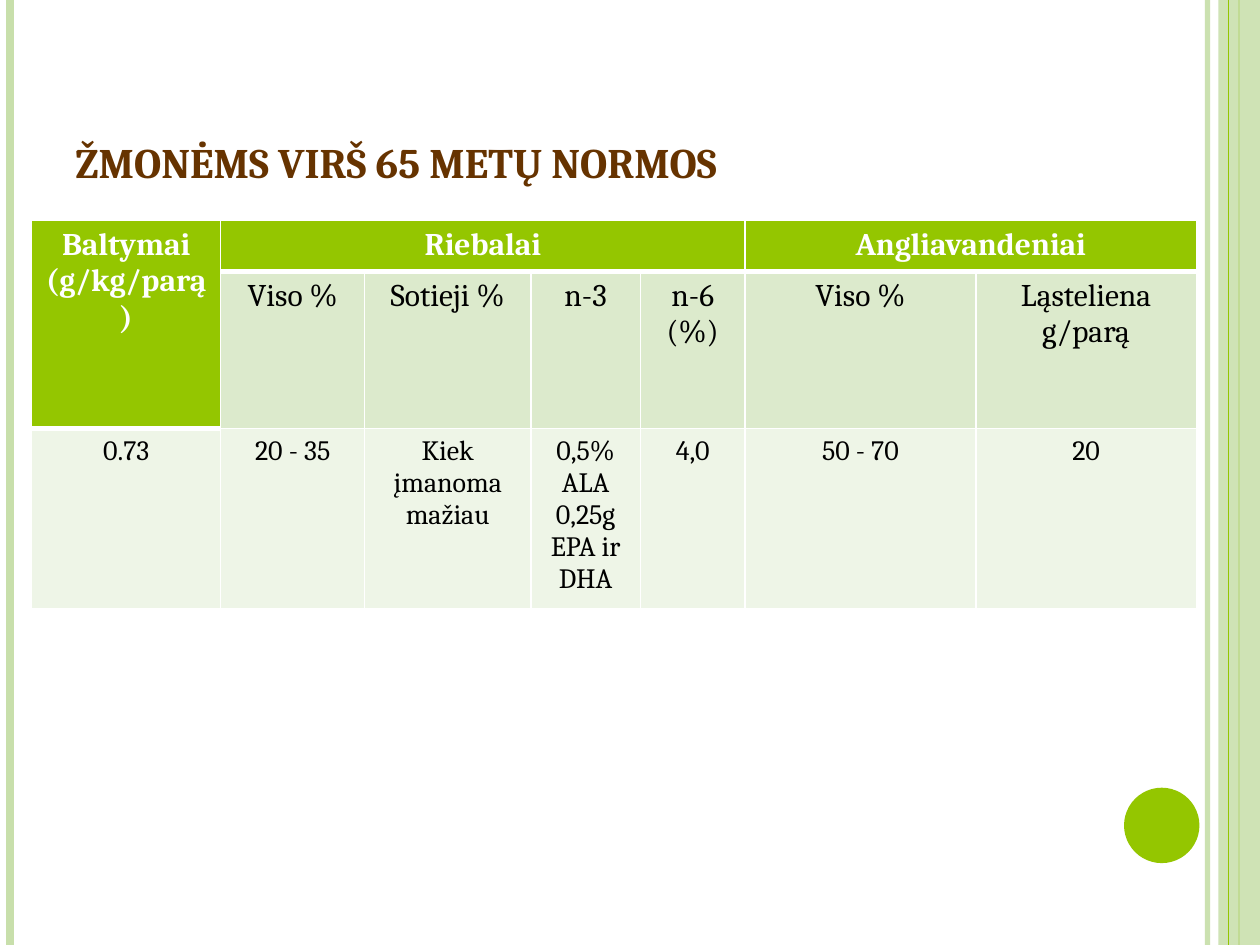
from lxml.etree import SubElement
from pptx import Presentation
from pptx.dml.color import RGBColor
from pptx.enum.shapes import MSO_CONNECTOR as Connector, MSO_SHAPE as Shape
from pptx.enum.text import MSO_ANCHOR as Anchor, PP_ALIGN as Align
from pptx.oxml.ns import qn
from pptx.util import Cm, Pt

COLORS = {
    "green": "94C600",
    "pale": "C8DFAB",
    "band": "DCEACC",
    "light": "EEF5E7",
    "brown": "663300",
    "white": "FFFFFF",
    "black": "000000",
}
FONT = "Cambria"
SLIDE_WIDTH, SLIDE_HEIGHT = 25.4, 19.05

COLUMN_WIDTHS = [3.81, 2.9, 3.35, 2.21, 2.11, 4.65, 4.45]
ROW_HEIGHTS = [1.02, 3.17, 3.48]
ROWS = [
    ["Baltymai (g/kg/parą)", "Riebalai", "", "", "", "Angliavandeniai", ""],
    ["", "Viso %", "Sotieji %", "n-3", "n-6\n(%)", "Viso %", "Ląsteliena\ng/parą"],
    ["0.73", "20 - 35", "Kiek įmanoma mažiau", "0,5% ALA\n0,25g EPA ir DHA",
     "4,0", "50 - 70", "20"],
]
MERGES = [((0, 0), (1, 0)), ((0, 1), (0, 4)), ((0, 5), (0, 6))]


def rgb(name):
    return RGBColor.from_string(COLORS[name])


def set_alpha(fill_parent, percent):
    color = next(fill_parent.iter(qn("a:srgbClr")))
    SubElement(color, qn("a:alpha"), val=str(percent * 1000))


def write_text(frame, text, size=18, color="black", bold=False,
               align=Align.LEFT, small_caps=False):
    frame.word_wrap = True
    for index, line in enumerate(text.split("\n")):
        paragraph = frame.add_paragraph() if index else frame.paragraphs[0]
        paragraph.alignment = align
        run = paragraph.add_run()
        run.text = line
        run.font.name = FONT
        run.font.size = Pt(size)
        run.font.bold = bold
        run.font.color.rgb = rgb(color)
        if small_caps:
            run.font._element.set("cap", "small")


def add_stripe(slide, x, top, height, color, width, alpha=None):
    line = slide.shapes.add_connector(
        Connector.STRAIGHT, Cm(x), Cm(top), Cm(x), Cm(top + height))
    line.line.color.rgb = rgb(color)
    line.line.width = Pt(width)
    if alpha:
        set_alpha(line._element.spPr, alpha)
    SubElement(line._element.spPr, qn("a:effectLst"))


def add_block(slide, kind, left, top, width, height, color, alpha=None):
    shape = slide.shapes.add_shape(kind, Cm(left), Cm(top), Cm(width), Cm(height))
    shape.shadow.inherit = False
    shape.fill.solid()
    shape.fill.fore_color.rgb = rgb(color)
    shape.line.fill.background()
    if alpha:
        set_alpha(shape._element.spPr, alpha)


def add_frame(slide, left, top, width, height):
    right = left + width
    add_stripe(slide, right - 1.06, top, height, "pale", 3, alpha=93)
    add_stripe(slide, left + 0.21, top, height, "pale", 4.5)
    add_stripe(slide, right - 0.42, top, height, "green", 1.5)
    add_block(slide, Shape.RECTANGLE, right - 0.84, top, 0.84, height, "pale", alpha=87)
    add_stripe(slide, right - 0.64, top, height, "green", 0.75)
    add_block(slide, Shape.OVAL, right - 2.74, top + 15.88, 1.52, 1.52, "green")


def add_title(slide, left, top, width, height):
    box = slide.shapes.add_textbox(Cm(left), Cm(top), Cm(width), Cm(height))
    box.text_frame.vertical_anchor = Anchor.BOTTOM
    write_text(box.text_frame, "žmonėms virš 65 metų normos",
               size=30, color="brown", bold=True, small_caps=True)


def is_header(row, column):
    return row == 0 or (row == 1 and column == 0)


def set_borders(cell, top, bottom):
    properties = cell._tc.get_or_add_tcPr()
    for side, width in (("L", 1), ("R", 1), ("T", top), ("B", bottom)):
        line = SubElement(properties, qn(f"a:ln{side}"), w=str(Pt(width)))
        fill = SubElement(line, qn("a:solidFill"))
        SubElement(fill, qn("a:srgbClr"), val=COLORS["white"])


def add_norms_table(slide, left, top):
    table = slide.shapes.add_table(
        len(ROWS), len(COLUMN_WIDTHS), Cm(left), Cm(top),
        Cm(sum(COLUMN_WIDTHS)), Cm(sum(ROW_HEIGHTS))).table
    for column, width in zip(table.columns, COLUMN_WIDTHS):
        column.width = Cm(width)
    for row, height in zip(table.rows, ROW_HEIGHTS):
        row.height = Cm(height)
    for start, end in MERGES:
        table.cell(*start).merge(table.cell(*end))
    for row, texts in enumerate(ROWS):
        for column, text in enumerate(texts):
            cell = table.cell(row, column)
            header = is_header(row, column)
            below_header = row > 0 and is_header(row - 1, column)
            set_borders(cell, 3 if below_header else 1, 3 if header else 1)
            cell.fill.solid()
            cell.fill.fore_color.rgb = rgb(
                "green" if header else "band" if row == 1 else "light")
            if text:
                write_text(cell.text_frame, text, size=16 if row == 2 else 18,
                           color="white" if header else "black",
                           bold=header, align=Align.CENTER)


def main():
    presentation = Presentation()
    presentation.slide_width = Cm(SLIDE_WIDTH)
    presentation.slide_height = Cm(SLIDE_HEIGHT)
    slide = presentation.slides.add_slide(presentation.slide_layouts[6])
    add_frame(slide, 0, 0, SLIDE_WIDTH, SLIDE_HEIGHT)
    add_title(slide, 1.27, 0.76, 20.75, 3.18)
    add_norms_table(slide, 0.64, 4.45)
    presentation.save("out.pptx")


if __name__ == "__main__":
    main()
